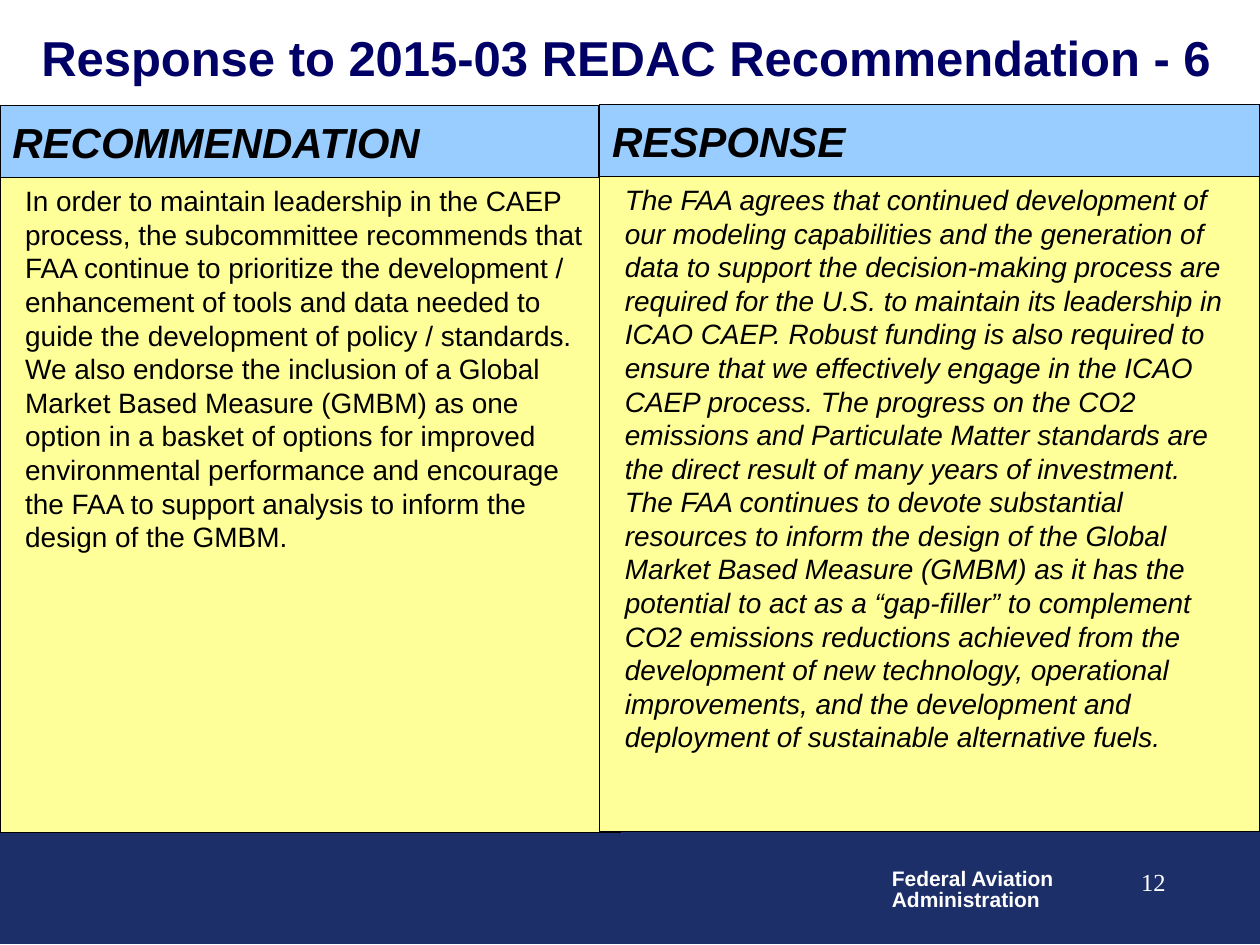
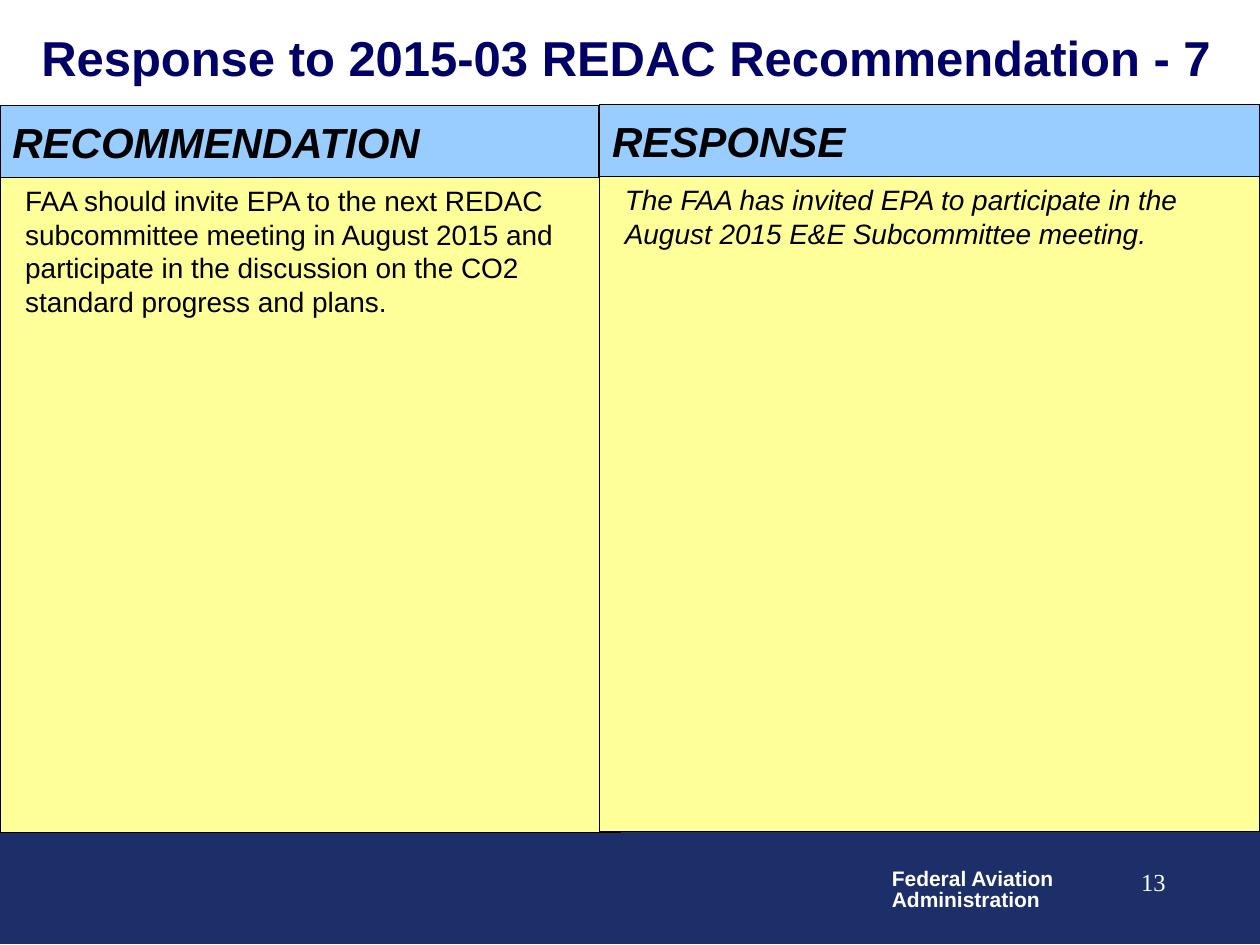
from typing import NamedTuple, Optional

from pptx import Presentation
from pptx.dml.color import RGBColor
from pptx.enum.shapes import MSO_SHAPE
from pptx.enum.text import MSO_ANCHOR, PP_ALIGN
from pptx.util import Inches, Pt

WHITE = RGBColor(0xFF, 0xFF, 0xFF)
BLACK = RGBColor(0x00, 0x00, 0x00)
TITLE_NAVY = RGBColor(0x00, 0x00, 0x66)
BAND_NAVY = RGBColor(0x1D, 0x2F, 0x68)
HEADING_BLUE = RGBColor(0x99, 0xCC, 0xFF)
BODY_YELLOW = RGBColor(0xFF, 0xFF, 0x99)

HEADING_HEIGHT = 0.57
BODY_HEIGHT = 5.2
FIRST_PAGE = 12
FIRST_RECOMMENDATION = 6


class Box(NamedTuple):
    left: float
    top: float
    width: float
    height: float


class TextStyle(NamedTuple):
    size: float
    color: RGBColor
    bold: bool = False
    italic: bool = False
    font: str = "Arial"
    align: PP_ALIGN = PP_ALIGN.LEFT
    anchor: MSO_ANCHOR = MSO_ANCHOR.TOP
    line_spacing: Optional[float] = None
    side_inset: float = 0.1
    wrap: bool = True


class Column(NamedTuple):
    heading: str
    left: float
    heading_top: float
    heading_width: float
    body_width: float
    body_style: TextStyle


class Exchange(NamedTuple):
    recommendation: str
    response: str


TITLE = TextStyle(28, TITLE_NAVY, bold=True, anchor=MSO_ANCHOR.MIDDLE)
HEADING = TextStyle(24, BLACK, bold=True, italic=True, anchor=MSO_ANCHOR.MIDDLE)
BODY = TextStyle(16, BLACK, side_inset=0.2)
AGENCY = TextStyle(12, WHITE, bold=True, line_spacing=0.85, wrap=False)
PAGE_NUMBER = TextStyle(14, WHITE, font="Times New Roman", align=PP_ALIGN.RIGHT)

COLUMNS = [
    Column("RECOMMENDATION", 0, 0.84, 4.75, 4.92, BODY),
    Column("RESPONSE", 4.76, 0.83, 5.24, 5.24, BODY._replace(italic=True)),
]

EXCHANGES = [
    Exchange(
        "In order to maintain leadership in the CAEP process, the subcommittee "
        "recommends that FAA continue to prioritize the development / enhancement "
        "of tools and data needed to guide the development of policy / standards. "
        "We also endorse the inclusion of a Global Market Based Measure (GMBM) as "
        "one option in a basket of options for improved environmental performance "
        "and encourage the FAA to support analysis to inform the design of the GMBM.",
        "The FAA agrees that continued development of our modeling capabilities and "
        "the generation of data to support the decision-making process are required "
        "for the U.S. to maintain its leadership in ICAO CAEP. Robust funding is also "
        "required to ensure that we effectively engage in the ICAO CAEP process. The "
        "progress on the CO2 emissions and Particulate Matter standards are the direct "
        "result of many years of investment. The FAA continues to devote substantial "
        "resources to inform the design of the Global Market Based Measure (GMBM) as "
        "it has the potential to act as a “gap-filler” to complement CO2 emissions "
        "reductions achieved from the development of new technology, operational "
        "improvements, and the development and deployment of sustainable alternative "
        "fuels.",
    ),
    Exchange(
        "FAA should invite EPA to the next REDAC subcommittee meeting in August 2015 "
        "and participate in the discussion on the CO2 standard progress and plans.",
        "The FAA has invited EPA to participate in the August 2015 E&E Subcommittee "
        "meeting.",
    ),
]


def write_text(shape, text: str, style: TextStyle) -> None:
    text_frame = shape.text_frame
    text_frame.text = text
    text_frame.word_wrap = style.wrap
    text_frame.vertical_anchor = style.anchor
    text_frame.margin_left = text_frame.margin_right = Inches(style.side_inset)
    for paragraph in text_frame.paragraphs:
        paragraph.alignment = style.align
        paragraph.line_spacing = style.line_spacing
        for run in paragraph.runs:
            run.font.name = style.font
            run.font.size = Pt(style.size)
            run.font.bold = style.bold
            run.font.italic = style.italic
            run.font.color.rgb = style.color


def add_panel(slide, box: Box, fill: RGBColor, line: RGBColor):
    panel = slide.shapes.add_shape(MSO_SHAPE.RECTANGLE, *map(Inches, box))
    panel.shadow.inherit = False
    panel.fill.solid()
    panel.fill.fore_color.rgb = fill
    panel.line.color.rgb = line
    panel.line.width = Pt(0.75)
    return panel


def add_label(slide, box: Box, text: str, style: TextStyle) -> None:
    write_text(slide.shapes.add_textbox(*map(Inches, box)), text, style)


def add_body(slide, column: Column, text: str) -> None:
    top = column.heading_top + HEADING_HEIGHT
    box = Box(column.left, top, column.body_width, BODY_HEIGHT)
    write_text(add_panel(slide, box, BODY_YELLOW, BLACK), text, column.body_style)


def add_heading(slide, column: Column) -> None:
    box = Box(column.left, column.heading_top, column.heading_width, HEADING_HEIGHT)
    write_text(add_panel(slide, box, HEADING_BLUE, BLACK), column.heading, HEADING)


def add_exchange_slide(presentation, index: int, exchange: Exchange) -> None:
    slide = presentation.slides.add_slide(presentation.slide_layouts[6])
    add_panel(slide, Box(0, 6.6, 10, 0.89), BAND_NAVY, BAND_NAVY)
    add_label(slide, Box(6.98, 6.85, 1.5, 0.44),
              "Federal Aviation\nAdministration", AGENCY)
    for column, text in zip(COLUMNS, exchange):
        add_body(slide, column, text)
    title = f"Response to 2015-03 REDAC Recommendation - {FIRST_RECOMMENDATION + index}"
    add_label(slide, Box(0.23, 0.12, 9.64, 0.67), title, TITLE)
    add_label(slide, Box(7.27, 6.83, 2.08, 0.5), str(FIRST_PAGE + index), PAGE_NUMBER)
    for column in COLUMNS:
        add_heading(slide, column)


def main() -> None:
    presentation = Presentation()
    presentation.slide_width = Inches(10)
    presentation.slide_height = Inches(7.5)
    for index, exchange in enumerate(EXCHANGES):
        add_exchange_slide(presentation, index, exchange)
    presentation.save("out.pptx")


if __name__ == "__main__":
    main()
